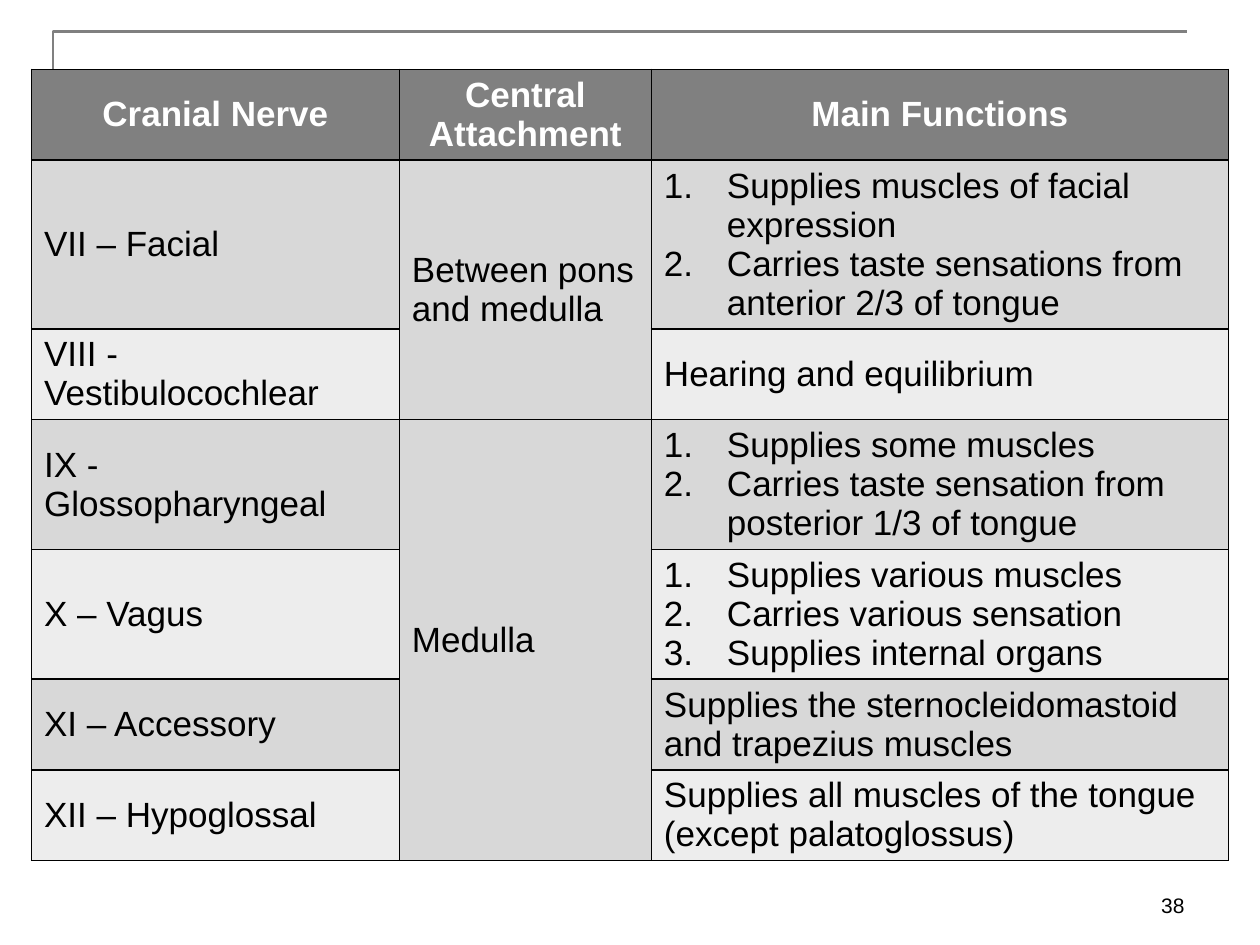
from lxml.etree import SubElement
from pptx import Presentation
from pptx.dml.color import RGBColor
from pptx.enum.text import MSO_ANCHOR as Anchor, PP_ALIGN as Align
from pptx.oxml import parse_xml
from pptx.oxml.ns import nsdecls, qn
from pptx.util import Inches, Pt

# Content: a list in a cell is numbered, None continues the cell above
HEADINGS = ["Cranial Nerve", "Central Attachment", "Main Functions"]
NERVES = [
    ("VII – Facial", "Between pons and medulla",
     ["Supplies muscles of facial expression",
      "Carries taste sensations from anterior 2/3 of tongue"]),
    ("VIII - Vestibulocochlear", None, "Hearing and equilibrium"),
    ("IX - Glossopharyngeal", "Medulla",
     ["Supplies some muscles",
      "Carries taste sensation from posterior 1/3 of tongue"]),
    ("X – Vagus", None,
     ["Supplies various muscles", "Carries various sensation",
      "Supplies internal organs"]),
    ("XI – Accessory", None,
     "Supplies the sternocleidomastoid and trapezius muscles"),
    ("XII – Hypoglossal", None,
     "Supplies all muscles of the tongue (except palatoglossus)"),
]
PAGE_NUMBER = "38"

# Theme
THEME = {
    "font": "Arial", "body": 20, "small": 12, "rule": 1.5, "border": 1,
    "gray": "808080", "white": "FFFFFF", "black": "000000",
    "bands": ["D8D8D8", "EDEDED"],
}

# Layout in inches; row heights follow the number of text lines
WIDTH, HEIGHT = 10, 7.5
TABLE_LEFT, TABLE_TOP = 0.25, 0.55
COLUMNS = [2.92, 2, 4.58]
ROW_LINES = [2, 4, 2, 3, 3, 2, 2]
LINE_HEIGHT, CELL_PADDING = 0.31, 0.1
INDENT = 0.5


def color(name):
    return RGBColor.from_string(name)


def write(frame, text, ink, size=THEME["body"], bold=False, align=Align.LEFT):
    numbered = isinstance(text, list)
    for index, line in enumerate(text if numbered else [text]):
        para = frame.paragraphs[0] if index == 0 else frame.add_paragraph()
        para.alignment = align
        if numbered:
            props = para._p.get_or_add_pPr()
            props.set("marL", str(Inches(INDENT)))
            props.set("indent", str(-Inches(INDENT)))
            SubElement(props, qn("a:buFont"), typeface="+mj-lt")
            SubElement(props, qn("a:buAutoNum"), type="arabicPeriod")
        span = para.add_run()
        span.text = line
        style = {"name": THEME["font"], "size": Pt(size), "bold": bold}
        for key, value in style.items():
            setattr(span.font, key, value)
        span.font.color.rgb = color(ink)


def paint(cell, fill):
    cell.fill.solid()
    cell.fill.fore_color.rgb = color(fill)
    cell.vertical_anchor = Anchor.MIDDLE
    props = cell._tc.get_or_add_tcPr()
    for index, side in enumerate("LRTB"):
        props.insert(index, parse_xml(
            f'<a:ln{side} {nsdecls("a")} w="{Pt(THEME["border"])}"><a:solidFill>'
            f'<a:srgbClr val="{THEME["black"]}"/></a:solidFill></a:ln{side}>'))


deck = Presentation()
deck.slide_width, deck.slide_height = Inches(WIDTH), Inches(HEIGHT)
page = deck.slides.add_slide(deck.slide_layouts[6])

# Corner rule
corner = page.shapes.build_freeform(Inches(0.42), Inches(0.92))
corner.add_line_segments(
    [(Inches(0.42), Inches(0.25)), (Inches(9.42), Inches(0.25))], close=False)
rule = corner.convert_to_shape()
rule.shadow.inherit = False
rule.fill.background()
rule.line.color.rgb = color(THEME["gray"])
rule.line.width = Pt(THEME["rule"])

# Nerve table
heights = [CELL_PADDING + LINE_HEIGHT * lines for lines in ROW_LINES]
table = page.shapes.add_table(
    len(heights), len(COLUMNS), Inches(TABLE_LEFT), Inches(TABLE_TOP),
    Inches(sum(COLUMNS)), Inches(sum(heights))).table
for column, width in zip(table.columns, COLUMNS):
    column.width = Inches(width)
for row, height in zip(table.rows, heights):
    row.height = Inches(height)

for col, heading in enumerate(HEADINGS):
    cell = table.cell(0, col)
    paint(cell, THEME["gray"])
    write(cell.text_frame, heading, THEME["white"], bold=True, align=Align.CENTER)

for row, nerve in enumerate(NERVES, start=1):
    for col, text in enumerate(nerve):
        cell = table.cell(row, col)
        paint(cell, THEME["bands"][(row - 1) % 2])
        if text is not None:
            write(cell.text_frame, text, THEME["black"])

# Merge each attachment down to the row before the next one
starts = [row for row, nerve in enumerate(NERVES, start=1) if nerve[1]]
for first, following in zip(starts, starts[1:] + [len(heights)]):
    table.cell(first, 1).merge(table.cell(following - 1, 1))

# Page number
box = page.shapes.add_textbox(Inches(7.17), Inches(6.83), Inches(2.33), Inches(0.5))
box.text_frame.word_wrap = True
box.text_frame.vertical_anchor = Anchor.BOTTOM
write(box.text_frame, PAGE_NUMBER, THEME["black"], THEME["small"], align=Align.RIGHT)

deck.save("out.pptx")
